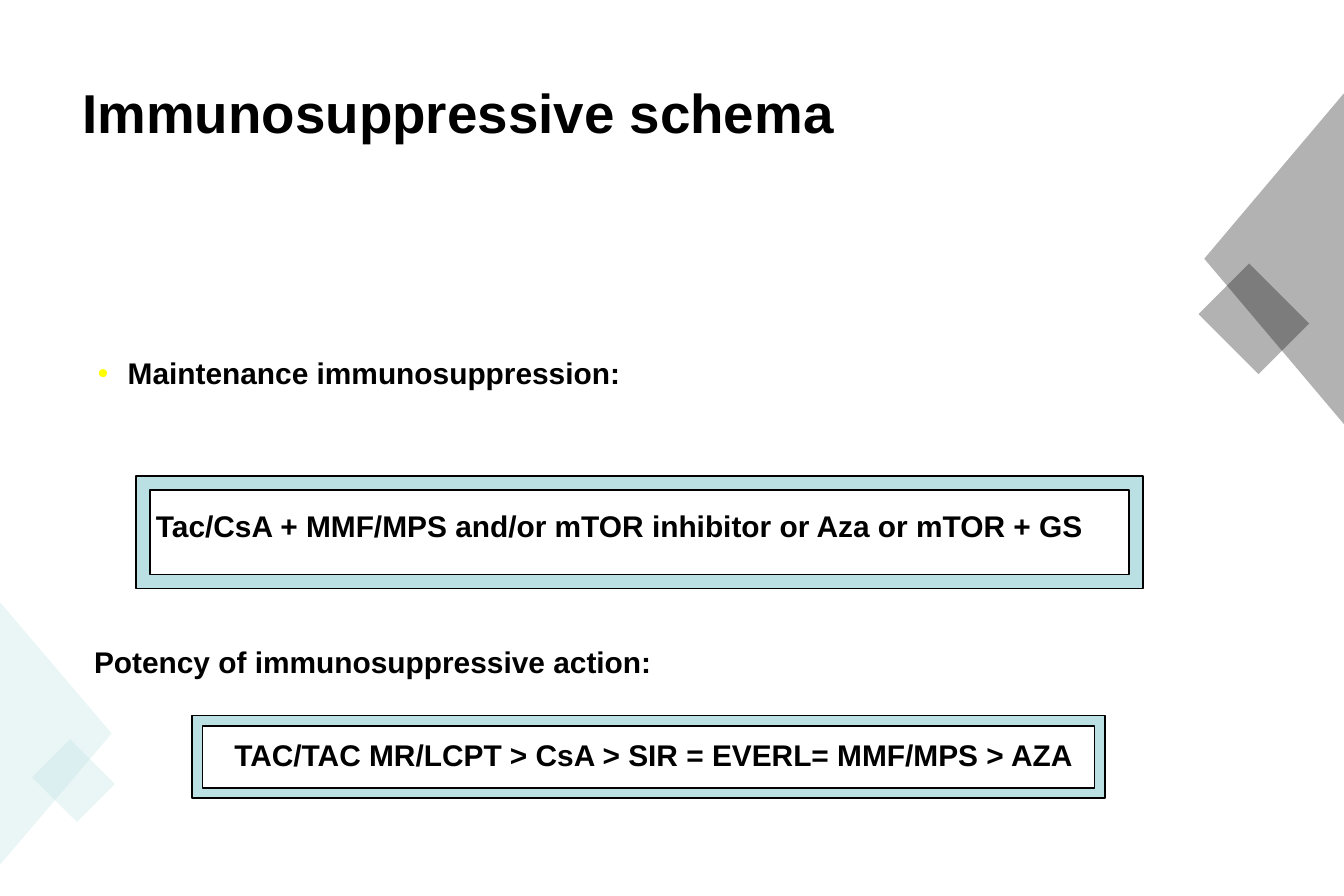
"""Build the immunosuppressive schema slide."""
from dataclasses import dataclass
from typing import Any

from lxml import etree
from pptx import Presentation
from pptx.dml.color import RGBColor
from pptx.enum.shapes import MSO_SHAPE
from pptx.enum.text import MSO_ANCHOR, MSO_AUTO_SIZE, PP_ALIGN
from pptx.oxml.ns import qn
from pptx.util import Pt

RECT = MSO_SHAPE.RECTANGLE
WEDGE = MSO_SHAPE.ISOSCELES_TRIANGLE
FRAME = MSO_SHAPE.FRAME
MIDDLE = MSO_ANCHOR.MIDDLE
TOP = MSO_ANCHOR.TOP
NO_FIT = MSO_AUTO_SIZE.NONE
LEFT = PP_ALIGN.LEFT
CENTER = PP_ALIGN.CENTER


@dataclass(frozen=True)
class Theme:
    font: str = "Arial"
    ink: str = "000000"
    teal: str = "BBE0E3"
    dot: str = "FFFF00"
    head: float = 33
    body: float = 18
    edge: float = 1
    alpha: int = 30


@dataclass(frozen=True)
class Box:
    left: float
    top: float
    width: float
    height: float

    def pts(self) -> tuple[Pt, Pt, Pt, Pt]:
        return Pt(self.left), Pt(self.top), Pt(self.width), Pt(self.height)


@dataclass(frozen=True)
class Decor:
    kind: Any
    box: Box
    color: str
    turn: float


@dataclass(frozen=True)
class Label:
    text: str
    box: Box
    align: Any = LEFT
    dotted: bool = False


THEME = Theme()
TITLE = Box(42.5, 25.2, 724.3, 89.3)
DECOR = [
    Decor(RECT, Box(730.1, 170.6, 51.1, 43.2), THEME.ink, 45),
    Decor(WEDGE, Box(668.2, 113.8, 199.4, 84.2), THEME.ink, 270),
    Decor(WEDGE, Box(-46.1, 408.2, 159.1, 67.7), THEME.teal, 90),
    Decor(RECT, Box(25.2, 454.3, 38.2, 32.4), THEME.teal, 45),
]
FRAMES = [Box(82, 287, 607, 67.7), Box(115.9, 431.3, 550.1, 49.7)]
LABELS = [
    Label("Maintenance immunosuppression:", Box(59, 214, 600, 21), dotted=True),
    Label("Tac/CsA + MMF/MPS and/or mTOR inhibitor or Aza or mTOR + GS",
          Box(94, 306, 580, 21)),
    Label("TAC/TAC MR/LCPT > CsA > SIR = EVERL= MMF/MPS > AZA",
          Box(133, 444, 522, 21), CENTER),
    Label("Potency of immunosuppressive action:", Box(56.7, 388, 364, 21)),
]


def write(para: Any, text: str, size: float) -> None:
    run = para.add_run()
    run.text = text
    font = run.font
    font.name, font.size, font.bold = THEME.font, Pt(size), True
    font.color.rgb = RGBColor.from_string(THEME.ink)


def add_title(slide: Any) -> None:
    title = slide.shapes.title
    title.left, title.top, title.width, title.height = TITLE.pts()
    frame = title.text_frame
    frame.auto_size = NO_FIT
    frame.word_wrap = True
    frame.vertical_anchor = MIDDLE
    para = frame.paragraphs[0]
    para.alignment = LEFT
    para.line_spacing = 0.9
    para.space_after = Pt(6)
    write(para, "Immunosuppressive schema", THEME.head)


def add_form(slide: Any, kind: Any, box: Box, color: str) -> Any:
    form = slide.shapes.add_shape(kind, *box.pts())
    form.shadow.inherit = False
    form.fill.solid()
    form.fill.fore_color.rgb = RGBColor.from_string(color)
    return form


def add_decor(slide: Any, item: Decor) -> None:
    form = add_form(slide, item.kind, item.box, item.color)
    form.rotation = item.turn
    form.line.fill.background()
    tint = form._element.spPr.find(qn("a:solidFill"))[0]
    etree.SubElement(tint, qn("a:alpha"), val=str(THEME.alpha * 1000))


def add_frame(slide: Any, box: Box) -> None:
    form = add_form(slide, FRAME, box, THEME.teal)
    form.line.color.rgb = RGBColor.from_string(THEME.ink)
    form.line.width = Pt(THEME.edge)


def add_dot(para: Any) -> None:
    props = para._p.get_or_add_pPr()
    props.set("marL", str(Pt(18)))
    props.set("indent", str(-Pt(18)))
    tone = etree.SubElement(props, qn("a:buClr"))
    etree.SubElement(tone, qn("a:srgbClr"), val=THEME.dot)
    etree.SubElement(props, qn("a:buFont"), typeface=THEME.font)
    etree.SubElement(props, qn("a:buChar"), char="•")


def add_label(slide: Any, label: Label) -> None:
    frame = slide.shapes.add_textbox(*label.box.pts()).text_frame
    frame.word_wrap = True
    frame.auto_size = NO_FIT
    frame.vertical_anchor = TOP
    frame.margin_left = frame.margin_right = 0
    frame.margin_top = frame.margin_bottom = 0
    para = frame.paragraphs[0]
    para.alignment = label.align
    if label.dotted:
        add_dot(para)
    write(para, label.text, THEME.body)


def main() -> None:
    deck = Presentation()
    deck.slide_width, deck.slide_height = Pt(810), Pt(540)
    slide = deck.slides.add_slide(deck.slide_layouts[5])
    add_title(slide)
    for item in DECOR:
        add_decor(slide, item)
    for box in FRAMES:
        add_frame(slide, box)
    for label in LABELS:
        add_label(slide, label)
    deck.save("out.pptx")


if __name__ == "__main__":
    main()
